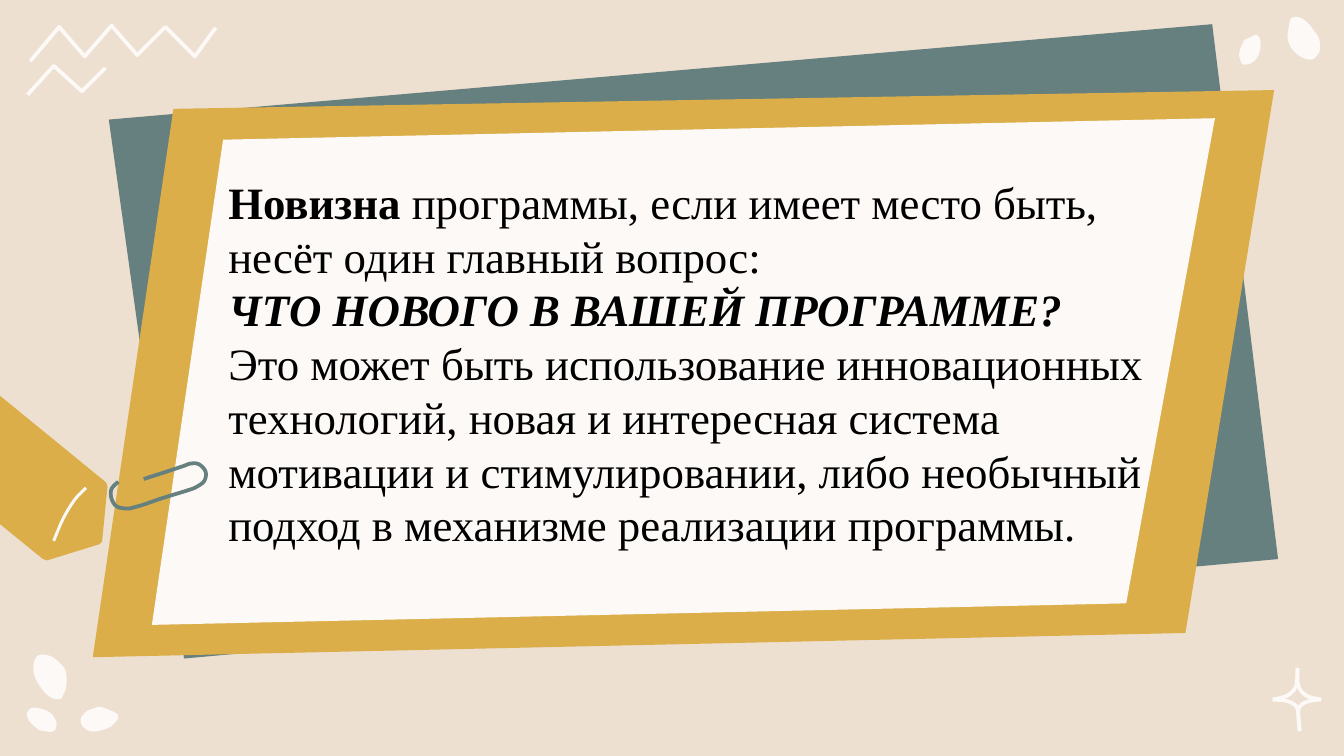
from dataclasses import dataclass

from pptx import Presentation
from pptx.dml.color import RGBColor
from pptx.enum.text import MSO_ANCHOR, PP_ALIGN
from pptx.util import Pt

TOP = MSO_ANCHOR.TOP
LEFT = PP_ALIGN.LEFT


@dataclass(frozen=True)
class Theme:
    sand: RGBColor = RGBColor.from_string("EEE0D1")
    cream: RGBColor = RGBColor.from_string("FCF9F6")
    gold: RGBColor = RGBColor.from_string("DBAE49")
    teal: RGBColor = RGBColor.from_string("65807E")
    ink: RGBColor = RGBColor.from_string("000000")
    font: str = "Times New Roman"
    body_size: Pt = Pt(24)
    body_leading: Pt = Pt(28.8)
    stroke: Pt = Pt(2)
    fine_stroke: Pt = Pt(1.6)


theme = Theme()

prs = Presentation()
prs.slide_width = Pt(720)
prs.slide_height = Pt(405)
# The slide is a grid of square cells, 1000 columns wide.
cell = prs.slide_width / 1000
slide = prs.slides.add_slide(prs.slide_layouts[6])
slide.background.fill.solid()
slide.background.fill.fore_color.rgb = theme.sand


def curve(points, closed, steps=6):
    """Return a Catmull-Rom curve through the points as a dense polyline."""
    count = len(points)
    dense = []
    for i in range(count if closed else count - 1):
        if closed:
            knots = [points[(i + k) % count] for k in (-1, 0, 1, 2)]
        else:
            knots = [points[min(max(i + k, 0), count - 1)] for k in (-1, 0, 1, 2)]
        for step in range(steps):
            t = step / steps
            dense.append(tuple(
                b + t / 2 * (c - a + t * (2 * a - 5 * b + 4 * c - d
                                          + t * (3 * (b - c) + d - a)))
                for a, b, c, d in zip(*knots)))
    return dense if closed else dense + [points[-1]]


def draw(points, color, width=None):
    """Draw a filled outline, or an open stroke when a width is given."""
    scaled = [(x * cell, y * cell) for x, y in points]
    builder = slide.shapes.build_freeform(*scaled[0], scale=1.0)
    builder.add_line_segments(scaled[1:], close=width is None)
    shape = builder.convert_to_shape()
    shape.shadow.inherit = False
    if width is None:
        shape.fill.solid()
        shape.fill.fore_color.rgb = color
        shape.line.fill.background()
    else:
        shape.fill.background()
        shape.line.color.rgb = color
        shape.line.width = width


petals = [
    [(45, 520), (47, 517), (49, 512), (49.5, 506), (49, 500), (47, 496),
     (42, 491), (37, 488), (31, 487), (27, 489), (25, 494), (25, 500),
     (27, 506), (33, 515), (39, 519.5)],
    [(20, 531), (21, 535), (24, 539), (29, 543), (33, 544), (38, 544.5),
     (41, 543), (42, 540), (41.5, 536), (37, 530), (29, 527), (23, 527)],
    [(88, 533), (87, 531), (83, 529), (78, 527), (74, 526), (70, 527),
     (65, 529), (61, 533), (60, 537), (62, 541), (67, 544), (73, 544),
     (82, 541), (87, 536)],
    [(934, 26), (930, 28), (926, 30), (923, 36), (922, 41), (923, 45),
     (925, 48), (931, 47), (936, 42), (938, 34), (937, 28)],
    [(962, 13), (960, 15), (959, 20), (958, 27), (959, 32), (961, 36),
     (966, 41), (972, 44), (977, 44), (981, 40), (982, 37), (982, 31),
     (980, 26), (973, 17), (967, 13)],
]
for petal in petals:
    draw(curve(petal, closed=True), theme.cream)

zigzags = [
    [(22.5, 45.5), (44, 20), (63, 42), (83, 19), (102, 41), (123, 20),
     (145, 42), (160.5, 20.5)],
    [(20.5, 70.5), (40, 49), (61, 68), (78.5, 50.5)],
]
for zigzag in zigzags:
    draw(zigzag, theme.cream, theme.stroke)

sparkle_sides = [
    [(965.5, 497), (965, 507), (963, 513), (957, 518), (947, 520.5)],
    [(947, 520.5), (957, 521.5), (964, 525), (966, 531), (967, 544)],
    [(967, 544), (966, 529), (969, 524), (975, 521.5), (983, 520.5)],
    [(983, 520.5), (974, 518.5), (968, 514), (965.5, 507), (965.5, 497)],
]
for side in sparkle_sides:
    draw(curve(side, closed=False), theme.cream, theme.stroke)

tag = [(0, 294.5), (79, 359), (80, 362), (76, 403), (74, 405), (35, 417),
       (32, 416), (0, 390)]
draw(tag, theme.gold)
tag_mark = [(64, 363), (55.5, 372), (47, 386), (40, 402.5)]
draw(curve(tag_mark, closed=False), theme.cream, theme.fine_stroke)

panels = [
    (theme.teal, [(137, 490), (951, 416), (902, 18), (81, 89)]),
    (theme.gold, [(882, 471), (948, 67), (129, 81), (69, 489)]),
    (theme.cream, [(838, 449), (904, 88), (166, 104), (113, 465)]),
]
for color, corners in panels:
    draw(corners, color)

paperclip = [(88, 358.5), (83, 364), (83, 371), (87, 377), (95, 378.5),
             (100, 377.5), (107, 375.5), (120, 371), (133, 367), (141, 364.5),
             (146, 362.5), (152, 358), (153, 351), (148, 345.5), (142, 345),
             (136, 347), (124, 351), (107, 356.5)]
draw(curve(paperclip, closed=False), theme.teal, theme.stroke)

# Each paragraph is a list of (text, bold, italic).
message = [
    [("Новизна", True, False),
     (" программы, если имеет место быть, несёт один главный вопрос:", False, False)],
    [("ЧТО НОВОГО В ВАШЕЙ ПРОГРАММЕ?", True, True)],
    [("Это может быть использование инновационных технологий, новая и "
      "интересная система мотивации и стимулировании, либо необычный подход "
      "в механизме реализации программы.", False, False)],
]
box = [round(cells * cell) for cells in (160, 125, 709, 326)]
frame = slide.shapes.add_textbox(*box).text_frame
frame.word_wrap = True
frame.vertical_anchor = TOP
for index, parts in enumerate(message):
    paragraph = frame.add_paragraph() if index else frame.paragraphs[0]
    paragraph.alignment = LEFT
    paragraph.line_spacing = theme.body_leading
    for text, bold, italic in parts:
        run = paragraph.add_run()
        run.text = text
        run.font.name = theme.font
        run.font.size = theme.body_size
        run.font.color.rgb = theme.ink
        run.font.bold = bold
        run.font.italic = italic

prs.save("out.pptx")
